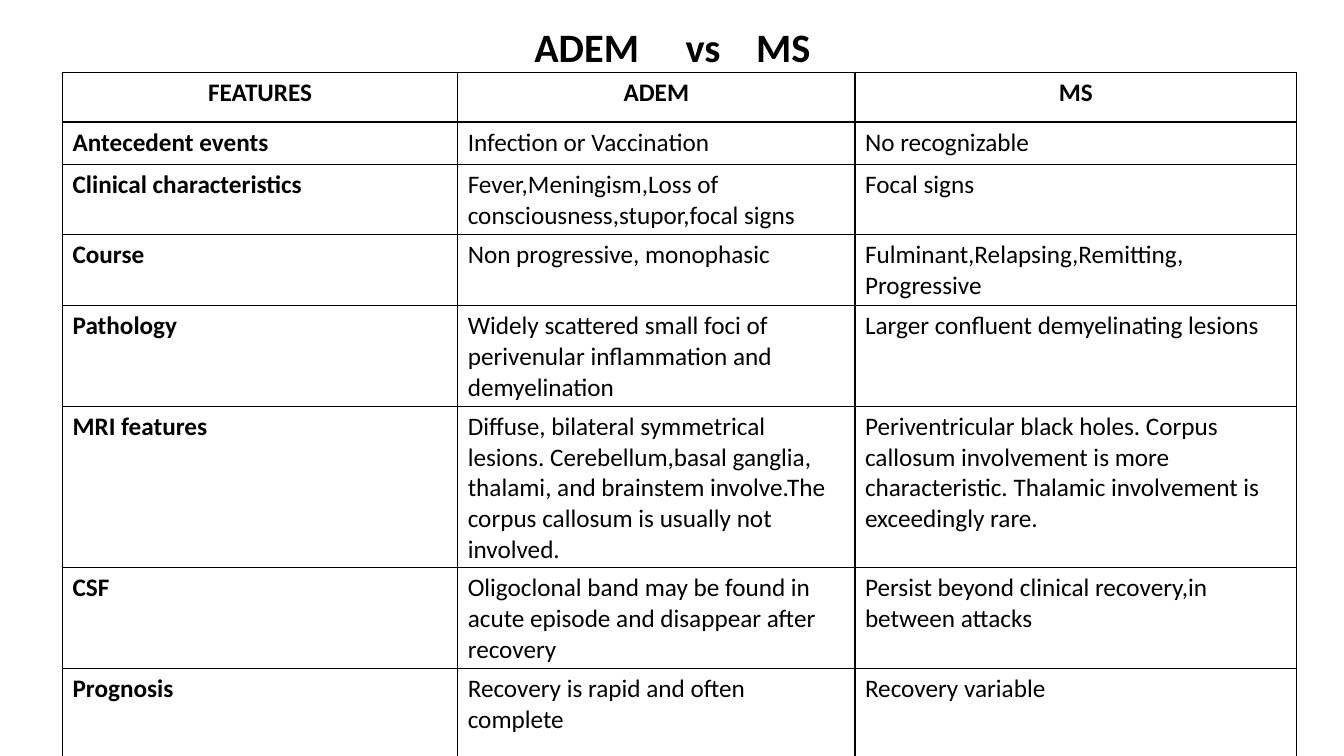
from lxml import etree
from pptx import Presentation
from pptx.dml.color import RGBColor
from pptx.enum.text import MSO_ANCHOR, PP_ALIGN
from pptx.oxml.ns import qn
from pptx.util import Pt

PX = 9144  # 100 px to the inch
CENTER, LEFT = PP_ALIGN.CENTER, PP_ALIGN.LEFT
MIDDLE, TOP = MSO_ANCHOR.MIDDLE, MSO_ANCHOR.TOP
FONT = "Calibri"
COLORS = {"text": "000000", "border": "000000", "cell": "FFFFFF"}

TITLE = ["ADEM", "vs", "MS"]
TITLE_START = 438
TITLE_TABS = [150, 220]

COLUMN_WIDTHS = [392, 394, 438]
ROW_HEIGHTS = [49, 42, 68, 68, 98, 156, 98, 98]
COMPARISON = [
    ("FEATURES", "ADEM", "MS"),
    ("Antecedent events", "Infection or Vaccination", "No recognizable"),
    ("Clinical characteristics",
     "Fever,Meningism,Loss of consciousness,stupor,focal signs",
     "Focal signs"),
    ("Course", "Non progressive, monophasic",
     "Fulminant,Relapsing,Remitting, Progressive"),
    ("Pathology",
     "Widely scattered small foci of perivenular inflammation and demyelination",
     "Larger confluent demyelinating lesions"),
    ("MRI features",
     "Diffuse, bilateral symmetrical lesions. Cerebellum,basal ganglia, thalami, "
     "and brainstem involve.The corpus callosum is usually not involved.",
     "Periventricular black holes. Corpus callosum involvement is more "
     "characteristic. Thalamic involvement is exceedingly rare."),
    ("CSF",
     "Oligoclonal band may be found in acute episode and disappear after recovery",
     "Persist beyond clinical recovery,in between attacks"),
    ("Prognosis", "Recovery is rapid and often complete", "Recovery variable"),
]


def px(length):
    return length * PX


def color(name):
    return RGBColor.from_string(COLORS[name])


def write(paragraph, text, size, bold, align):
    paragraph.text = text
    paragraph.alignment = align
    paragraph.font.name = FONT
    paragraph.font.size = Pt(size)
    paragraph.font.bold = bold
    paragraph.font.color.rgb = color("text")


def add_title(slide, left, top, width, height):
    frame = slide.shapes.add_textbox(px(left), px(top), px(width), px(height)).text_frame
    frame.word_wrap = True
    frame.vertical_anchor = MIDDLE
    frame.margin_left = px(TITLE_START)
    frame.margin_right = frame.margin_top = frame.margin_bottom = 0
    heading = frame.paragraphs[0]
    write(heading, "\t".join(TITLE), 28.8, True, LEFT)
    heading.line_spacing = 0.9
    # Tab stops space the three words; they precede the default run properties
    properties = heading._p.get_or_add_pPr()
    stops = etree.Element(qn("a:tabLst"))
    for position in TITLE_TABS:
        etree.SubElement(stops, qn("a:tab"), pos=str(px(position)), algn="l")
    properties.find(qn("a:defRPr")).addprevious(stops)


def add_borders(cell):
    properties = cell._tc.get_or_add_tcPr()
    for index, side in enumerate(("a:lnL", "a:lnR", "a:lnT", "a:lnB")):
        line = etree.Element(qn(side), w=str(Pt(1)))
        fill = etree.SubElement(line, qn("a:solidFill"))
        etree.SubElement(fill, qn("a:srgbClr"), val=COLORS["border"])
        properties.insert(index, line)


def add_comparison(slide, left, top):
    table = slide.shapes.add_table(
        len(ROW_HEIGHTS), len(COLUMN_WIDTHS), px(left), px(top),
        px(sum(COLUMN_WIDTHS)), px(sum(ROW_HEIGHTS))).table
    table.first_row = table.horz_banding = False
    for column, width in zip(table.columns, COLUMN_WIDTHS):
        column.width = px(width)
    for r, (height, texts) in enumerate(zip(ROW_HEIGHTS, COMPARISON)):
        table.rows[r].height = px(height)
        for c, text in enumerate(texts):
            cell = table.cell(r, c)
            cell.vertical_anchor = TOP
            cell.fill.solid()
            cell.fill.fore_color.rgb = color("cell")
            add_borders(cell)
            write(cell.text_frame.paragraphs[0], text, 18,
                  r == 0 or c == 0, CENTER if r == 0 else LEFT)


def main():
    deck = Presentation()
    deck.slide_width, deck.slide_height = px(1333), px(750)
    slide = deck.slides.add_slide(deck.slide_layouts[6])
    # Heading above the table of features
    add_title(slide, 92, 27, 1150, 45)
    add_comparison(slide, 62, 72)
    deck.save("out.pptx")


if __name__ == "__main__":
    main()
